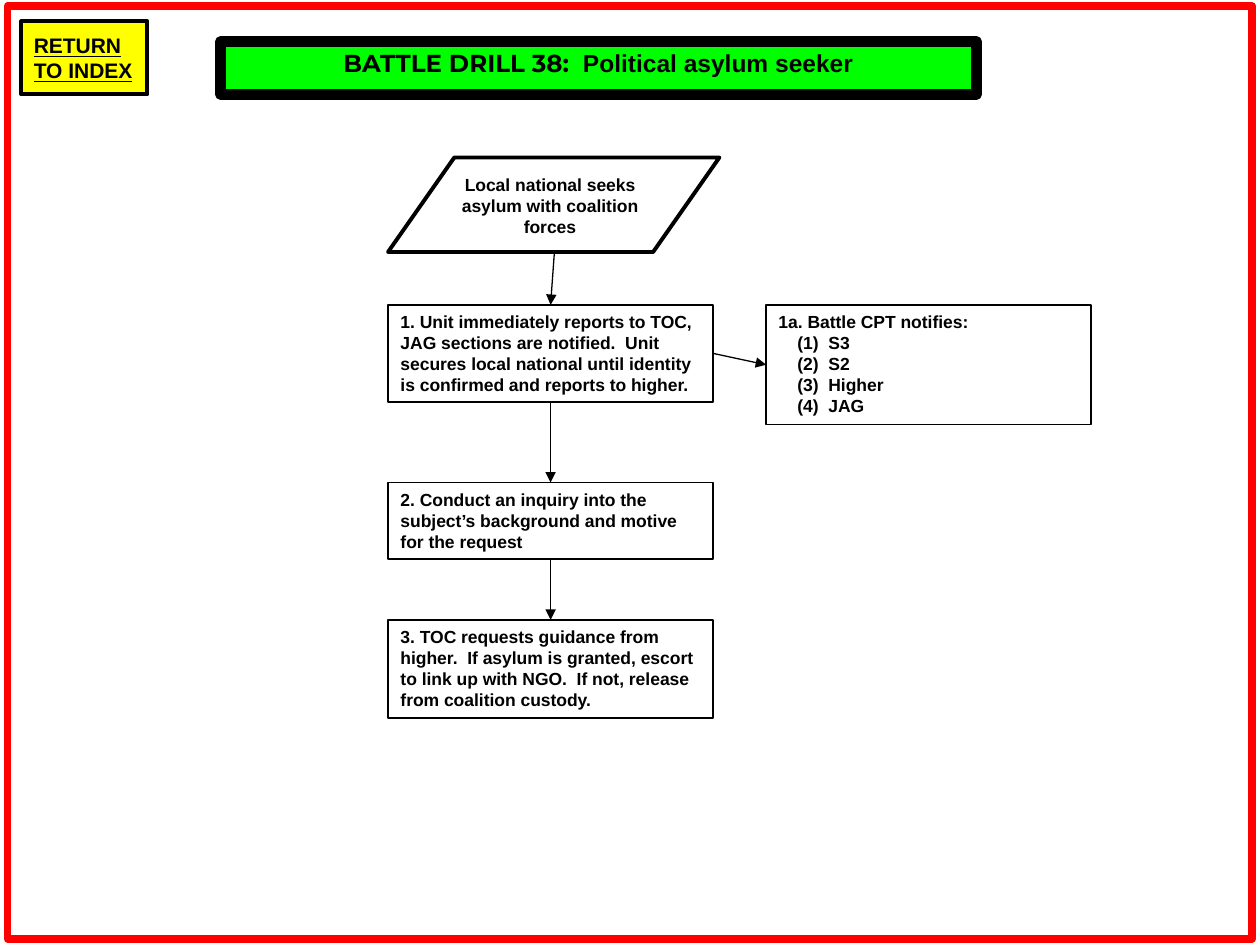
from pptx import Presentation
from pptx.dml.color import RGBColor
from pptx.enum.shapes import MSO_CONNECTOR, MSO_SHAPE as Shape
from pptx.enum.text import MSO_ANCHOR as Anchor, MSO_AUTO_SIZE as AutoSize, PP_ALIGN as Align
from pptx.oxml.ns import qn
from pptx.util import Inches, Pt
from lxml.etree import SubElement

THEME = {
    "black": RGBColor(0, 0, 0), "red": RGBColor(255, 0, 0),
    "yellow": RGBColor(255, 255, 0), "green": RGBColor(0, 255, 0),
    "font": "Arial", "title_font": "Montserrat",
    "body": 10, "button": 12, "title": 14,
}

TITLE = [("BATTLE DRILL 38:", THEME["title_font"]),
         ("  Political asylum seeker", THEME["font"])]
BUTTON = ["RETURN", "TO INDEX"]
START = ["Local national seeks asylum with coalition forces"]
STEP_LEFT, STEP_WIDTH, SIDE_LEFT = 3.08, 2.58, 6.08
# name: (left, top, height, lines)
STEPS = {
    "report": (STEP_LEFT, 2.42, 0.77, [
        "1. Unit immediately reports to TOC, JAG sections are notified.  Unit "
        "secures local national until identity is confirmed and reports to higher."]),
    "notify": (SIDE_LEFT, 2.42, 0.95, [
        "1a. Battle CPT notifies:", "(1)  S3", "(2)  S2", "(3)  Higher", "(4)  JAG"]),
    "inquiry": (STEP_LEFT, 3.83, 0.61, [
        "2. Conduct an inquiry into the subject’s background and motive for the request"]),
    "guidance": (STEP_LEFT, 4.92, 0.78, [
        "3. TOC requests guidance from higher.  If asylum is granted, escort to "
        "link up with NGO.  If not, release from coalition custody."]),
}
TOP, LEFT, BOTTOM, RIGHT = range(4)
LINKS = [("report", BOTTOM, "inquiry", TOP),
         ("report", RIGHT, "notify", LEFT),
         ("inquiry", BOTTOM, "guidance", TOP)]


def style_font(font, size, name=THEME["font"], underline=False):
    values = {"size": Pt(size), "name": name, "bold": True, "underline": underline}
    for key, value in values.items():
        setattr(font, key, value)
    font.color.rgb = THEME["black"]


def paint(shape, fill, line, width):
    if fill is None:
        shape.fill.background()
    else:
        shape.fill.solid()
        shape.fill.fore_color.rgb = fill
    shape.line.color.rgb = line
    shape.line.width = Pt(width)


def add_outline(page, kind, at, width, fill=None, line=THEME["black"]):
    shape = page.shapes.add_shape(kind, *map(Inches, at))
    shape.shadow.inherit = False
    paint(shape, fill, line, width)
    return shape


def write(shape, lines, size=THEME["body"], align=Align.LEFT, anchor=Anchor.TOP,
          wrap=True, underline=False):
    frame = shape.text_frame
    frame.word_wrap, frame.vertical_anchor = wrap, anchor
    for index, line in enumerate(lines):
        para = frame.paragraphs[0] if index == 0 else frame.add_paragraph()
        para.alignment = align
        if line.startswith("("):
            para._p.get_or_add_pPr().set("marL", str(Inches(0.15)))
        span = para.add_run()
        span.text = line
        style_font(span.font, size, underline=underline)


def add_arrow(page, start=(0, 0), end=(0, 0)):
    arrow = page.shapes.add_connector(
        MSO_CONNECTOR.STRAIGHT, *map(Inches, (*start, *end)))
    arrow.line.color.rgb = THEME["black"]
    arrow.line.width = Pt(0.75)
    SubElement(arrow.line._get_or_add_ln(), qn("a:tailEnd"), type="triangle")
    SubElement(arrow._element.spPr, qn("a:effectLst"))
    return arrow


def add_title(page):
    title = page.shapes.title
    title.left, title.top, title.width, title.height = map(Inches, (1.75, 0.33, 6, 0.42))
    paint(title, THEME["green"], THEME["black"], 6)
    frame = title.text_frame
    frame.vertical_anchor, frame.auto_size = Anchor.TOP, AutoSize.NONE
    para = frame.paragraphs[0]
    para.alignment = Align.CENTER
    for text, font in TITLE:
        span = para.add_run()
        span.text = text
        style_font(span.font, THEME["title"], font)


def main():
    deck = Presentation()
    deck.slide_width, deck.slide_height = Inches(10), Inches(7.5)
    page = deck.slides.add_slide(deck.slide_layouts[5])

    add_title(page)
    add_outline(page, Shape.RECTANGLE, (0.06, 0.05, 9.88, 7.4), 4.5, line=THEME["red"])
    button = add_outline(page, Shape.RECTANGLE, (0.17, 0.17, 1, 0.58), 2.25, THEME["yellow"])
    write(button, BUTTON, THEME["button"], anchor=Anchor.MIDDLE, wrap=False, underline=True)

    add_outline(page, Shape.FLOWCHART_DATA, (3.08, 1.25, 2.63, 0.75), 2.25)
    label = page.shapes.add_textbox(*map(Inches, (3.41, 1.33, 1.91, 0.6)))
    write(label, START, align=Align.CENTER)

    boxes = {}
    for name, (left, top, height, lines) in STEPS.items():
        boxes[name] = add_outline(
            page, Shape.RECTANGLE, (left, top, STEP_WIDTH, height), 1)
        write(boxes[name], lines)

    first = add_arrow(page, start=(4.4, 2), end=(4.38, 2.42))
    first.end_connect(boxes["report"], TOP)
    for source, source_side, target, target_side in LINKS:
        arrow = add_arrow(page)
        arrow.begin_connect(boxes[source], source_side)
        arrow.end_connect(boxes[target], target_side)

    deck.save("out.pptx")


if __name__ == "__main__":
    main()
